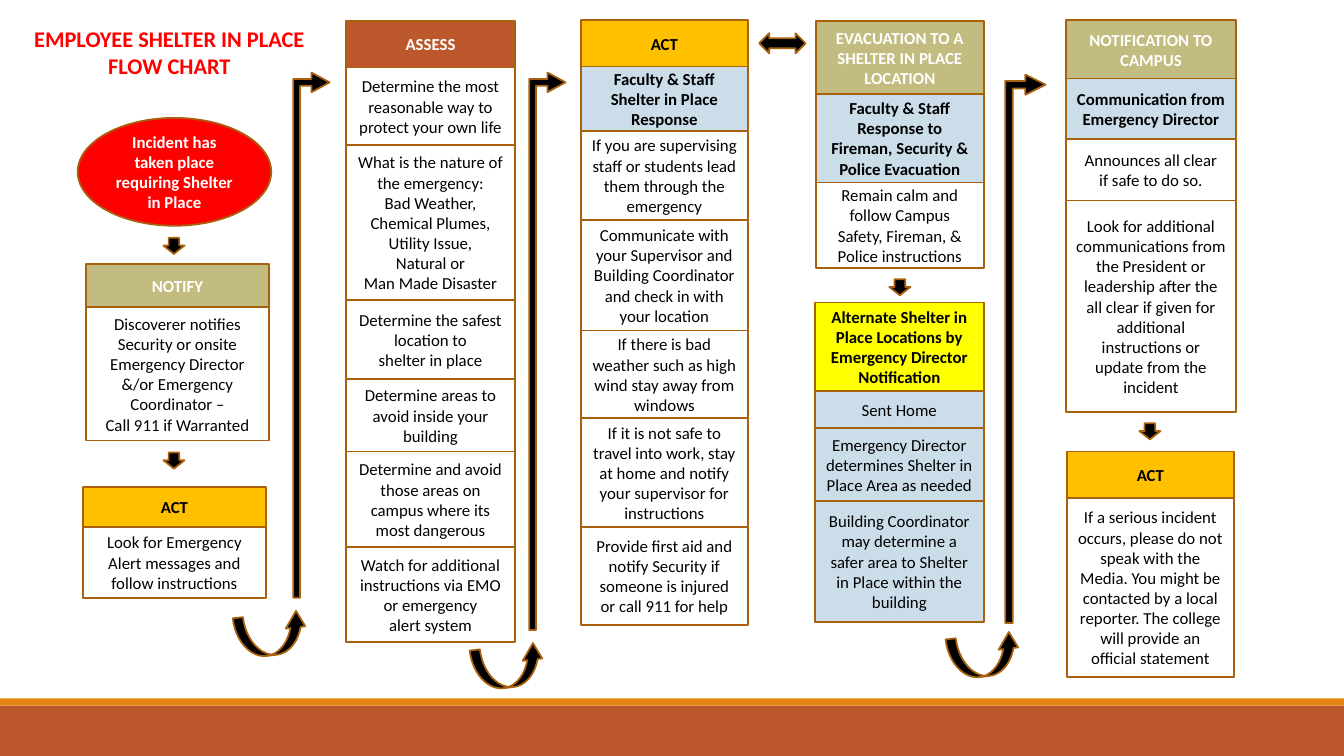
from pptx import Presentation
from pptx.dml.color import RGBColor
from pptx.enum.shapes import MSO_SHAPE as SHAPE
from pptx.enum.text import MSO_ANCHOR as ANCHOR, MSO_AUTO_SIZE as AUTO_SIZE, PP_ALIGN as ALIGN
from pptx.oxml.ns import qn
from pptx.util import Inches, Pt

OUTLINE = "A9610D"
STYLES = {
    "assess": ("BD582C", "FFFFFF", True),
    "olive": ("C2BC80", "FFFFFF", True),
    "act": ("FFC000", "000000", True),
    "alternate": ("FFFF00", "000000", True),
    "incident": ("FF0000", "FFFFFF", True),
    "response": ("CCDDEA", "000000", True),
    "location": ("CCDDEA", "000000", False),
    "step": ("FFFFFF", "000000", False),
}
COLUMNS = [
    ((0.85, 2.62, 1.82), [
        (0.43, "olive", "NOTIFY"),
        (1.32, "step", "Discoverer notifies Security or onsite Emergency Director &/or Emergency Coordinator –\nCall 911 if Warranted"),
    ]),
    ((0.82, 4.83, 1.82), [
        (0.4, "act", "ACT"),
        (0.7, "step", "Look for Emergency Alert messages and follow instructions"),
    ]),
    ((3.43, 0.21, 1.68), [
        (0.46, "assess", "ASSESS"),
        (0.77, "step", "Determine the most reasonable way to protect your own life"),
        (1.54, "step", "What is the nature of the emergency:\nBad Weather, Chemical Plumes, Utility Issue,\nNatural or\nMan Made Disaster"),
        (0.78, "step", "Determine the safest location to\nshelter in place"),
        (0.72, "step", "Determine areas to avoid inside your building"),
        (0.95, "step", "Determine and avoid those areas on campus where its most dangerous"),
        (0.94, "step", "Watch for additional instructions via EMO or emergency\nalert system"),
    ]),
    ((5.76, 0.2, 1.66), [
        (0.46, "act", "ACT"),
        (0.64, "response", "Faculty & Staff\nShelter in Place Response"),
        (0.88, "step", "If you are supervising staff or students lead them through the emergency"),
        (1.1, "step", "Communicate with your Supervisor and Building Coordinator and check in with your location"),
        (0.87, "step", "If there is bad weather such as high wind stay away from windows"),
        (1.08, "step", "If it is not safe to travel into work, stay at home and notify your supervisor for instructions"),
        (0.97, "step", "Provide first aid and notify Security if someone is injured or call 911 for help"),
    ]),
    ((8.09, 0.21, 1.67), [
        (0.72, "olive", "EVACUATION TO A SHELTER IN PLACE LOCATION"),
        (0.88, "response", "Faculty & Staff Response to\nFireman, Security &\nPolice Evacuation"),
        (0.85, "step", "Remain calm and follow Campus Safety, Fireman, & Police instructions"),
    ]),
    ((8.08, 3, 1.68), [
        (0.88, "alternate", "Alternate Shelter in Place Locations by Emergency Director Notification"),
        (0.37, "location", "Sent Home"),
        (0.72, "location", "Emergency Director determines Shelter in Place Area as needed"),
        (1.2, "location", "Building Coordinator may determine a safer area to Shelter in Place within the building"),
    ]),
    ((10.57, 0.2, 1.69), [
        (0.58, "olive", "NOTIFICATION TO CAMPUS"),
        (0.6, "response", "Communication from Emergency Director"),
        (0.61, "step", "Announces all clear\nif safe to do so."),
        (2.1, "step", "Look for additional communications from the President or leadership after the all clear if given for additional instructions or update from the incident"),
    ]),
    ((10.58, 4.48, 1.66), [
        (0.46, "act", "ACT"),
        (1.78, "step", "If a serious incident occurs, please do not speak with the Media. You might be contacted by a local reporter. The college will provide an official statement"),
    ]),
]
DOWN_ARROWS = [(1.62, 2.36), (1.62, 4.49), (8.82, 2.77), (11.3, 4.2)]
RISERS = [
    ((2.91, 0.72, 0.36, 5.21), 0.271, (2.33, 6.09)),
    ((5.25, 0.72, 0.36, 5.53), 0.271, (4.68, 6.41)),
    ((9.97, 0.74, 0.4, 5.44), 0.25, (9.4, 6.3)),
]


def color(hex_code):
    return RGBColor.from_string(hex_code)


def write(holder, text, size=12, ink="000000", bold=False, anchor=ANCHOR.MIDDLE):
    frame = holder.text_frame
    frame.text = text
    frame.word_wrap = True
    frame.auto_size = AUTO_SIZE.NONE
    frame.vertical_anchor = anchor
    for line in frame.paragraphs:
        line.alignment = ALIGN.CENTER
        line.space_before = Pt(0)
        line.font.name = "Calibri"
        line.font.size = Pt(size)
        line.font.bold = bold
        line.font.color.rgb = color(ink)


def draw(slide, kind, box, fill, outline=OUTLINE, adjustments=()):
    shape = slide.shapes.add_shape(kind, *map(Inches, box))
    shape.shadow.inherit = False
    shape.fill.solid()
    shape.fill.fore_color.rgb = color(fill)
    if outline:
        shape.line.color.rgb = color(outline)
        shape.line.width = Pt(1.25)
    else:
        shape.line.fill.background()
    for index, value in enumerate(adjustments):
        shape.adjustments[index] = value
    return shape


def add_step(slide, box, style, text, kind=SHAPE.RECTANGLE):
    fill, ink, bold = STYLES[style]
    write(draw(slide, kind, box, fill), text, ink=ink, bold=bold)


def add_column(slide, box, steps):
    left, top, width = box
    for height, style, text in steps:
        add_step(slide, (left, top, width, height), style, text)
        top += height


def add_heading(slide, box):
    heading = slide.shapes.title
    heading.left, heading.top, heading.width, heading.height = map(Inches, box)
    write(heading, "EMPLOYEE SHELTER IN PLACE\nFLOW CHART", size=16, ink="FF0000",
          bold=True, anchor=ANCHOR.TOP)


def add_footer(slide, box):
    left, top, width, height = box
    stripe = 0.07
    draw(slide, SHAPE.RECTANGLE, (left, top + stripe, width, height - stripe), "BD582C", None)
    draw(slide, SHAPE.RECTANGLE, (left, top, width, stripe), "E48312", None)


def add_riser(slide, box, head_width, hook_corner):
    draw(slide, SHAPE.BENT_ARROW, box, "000000", adjustments=(0.187, head_width, 0.5, 0))
    hook = draw(slide, SHAPE.CURVED_DOWN_ARROW, (*hook_corner, 0.73, 0.41), "000000",
                adjustments=(0.25, 0.477, 0.395))
    hook.rotation = 173.3
    hook._element.spPr.find(qn("a:xfrm")).set("flipH", "1")


def add_arrows(slide):
    for corner in DOWN_ARROWS:
        draw(slide, SHAPE.DOWN_ARROW, (*corner, 0.21, 0.16), "000000", adjustments=(0.5, 0.522))
    for riser in RISERS:
        add_riser(slide, *riser)
    draw(slide, SHAPE.LEFT_RIGHT_ARROW, (7.53, 0.33, 0.46, 0.2), "000000")


def main():
    deck = Presentation()
    deck.slide_width, deck.slide_height = Inches(13.33), Inches(7.5)
    slide = deck.slides.add_slide(deck.slide_layouts[5])
    add_footer(slide, (0, 6.93, 13.33, 0.57))
    add_heading(slide, (0.17, 0.2, 3.02, 0.64))
    add_step(slide, (0.77, 1.17, 1.92, 1.07), "incident",
             "Incident has taken place requiring Shelter in Place", SHAPE.FLOWCHART_CONNECTOR)
    for box, steps in COLUMNS:
        add_column(slide, box, steps)
    add_arrows(slide)
    deck.save("out.pptx")


if __name__ == "__main__":
    main()
